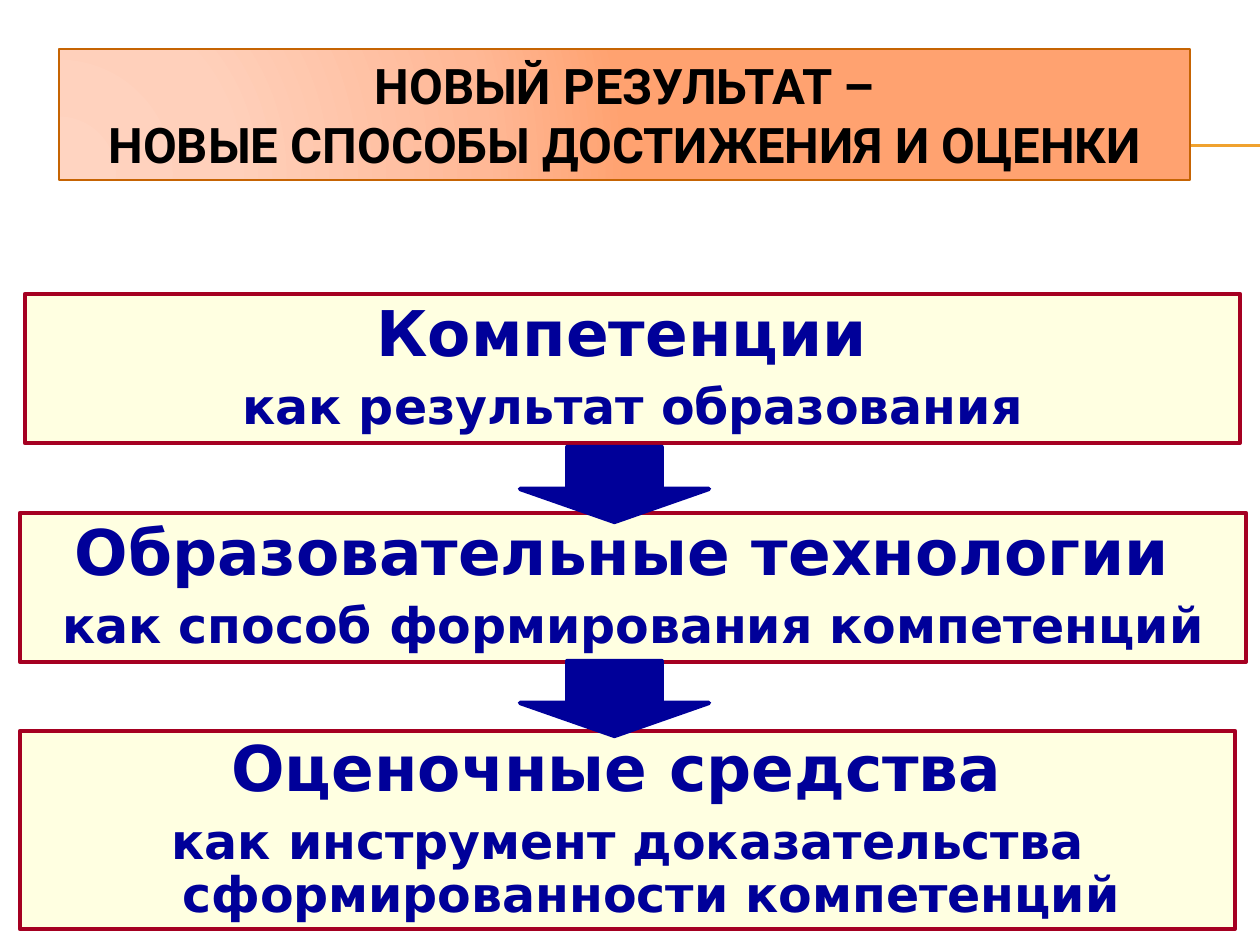
"""Build a slide on competencies, technologies and assessment as a chain of boxes."""
from dataclasses import dataclass

from lxml import etree
from pptx import Presentation
from pptx.dml.color import RGBColor
from pptx.enum.shapes import MSO_CONNECTOR, MSO_SHAPE
from pptx.enum.text import MSO_ANCHOR, MSO_AUTO_SIZE, PP_ALIGN
from pptx.oxml import parse_xml
from pptx.oxml.ns import nsdecls, qn
from pptx.util import Emu, Pt

RECTANGLE = MSO_SHAPE.RECTANGLE
DOWN_ARROW = MSO_SHAPE.DOWN_ARROW
STRAIGHT = MSO_CONNECTOR.STRAIGHT
CENTER = PP_ALIGN.CENTER
TOP, MIDDLE = MSO_ANCHOR.TOP, MSO_ANCHOR.MIDDLE
GROW = MSO_AUTO_SIZE.SHAPE_TO_FIT_TEXT

SLIDE_WIDTH, SLIDE_HEIGHT = 1260, 945
EMU_PER_PX = 914400 / 126
NAVY, CRIMSON, CREAM = "000099", "A50021", "FFFFE1"
HANGING_PX = 47
TITLE = "НОВЫЙ РЕЗУЛЬТАТ –\vНОВЫЕ СПОСОБЫ ДОСТИЖЕНИЯ И ОЦЕНКИ"
TITLE_STOPS = ((0, "FFD4C1"), (30, "FFD0BB"), (75, "FFB896"), (100, "FFA270"))


@dataclass(frozen=True)
class Area:
    left: int
    top: int
    width: int
    height: int


@dataclass(frozen=True)
class Stage:
    area: Area
    heading: str
    role: str


STAGES = (
    Stage(Area(25, 294, 1215, 149), "Компетенции ", "как результат образования"),
    Stage(Area(20, 513, 1226, 149), "Образовательные технологии ",
          "как способ формирования компетенций"),
    Stage(Area(20, 731, 1215, 198), "Оценочные средства ",
          "как инструмент доказательства сформированности компетенций"),
)
ARROWS = (Area(520, 661, 189, 75), Area(520, 447, 189, 75))


def px(length: int) -> Emu:
    return Emu(round(length * EMU_PER_PX))


def color(value: str) -> RGBColor:
    return RGBColor.from_string(value)


def add_block(slide, preset, area: Area, fill: str, outline: str, weight: float):
    block = slide.shapes.add_shape(
        preset, px(area.left), px(area.top), px(area.width), px(area.height))
    block.shadow.inherit = False
    block.fill.solid()
    block.fill.fore_color.rgb = color(fill)
    block.line.color.rgb = color(outline)
    block.line.width = Pt(weight)
    return block


def write(paragraph, text: str, size: int, family: str, ink: str) -> None:
    paragraph.text = text
    paragraph.alignment = CENTER
    font = paragraph.font
    font.size, font.name, font.bold = Pt(size), family, True
    font.color.rgb = color(ink)


def add_rule(slide, top: int) -> None:
    rule = slide.shapes.add_connector(
        STRAIGHT, px(71), px(top), px(SLIDE_WIDTH), px(top))
    rule.line.color.rgb = color("F0A22E")
    rule.line.width = Pt(0.75)
    etree.SubElement(rule._element.spPr, qn("a:effectLst"))


def add_stage(slide, stage: Stage) -> None:
    frame = add_block(slide, RECTANGLE, stage.area, CREAM, CRIMSON, 2.5).text_frame
    frame.word_wrap = True
    frame.vertical_anchor = MIDDLE
    heading, role = frame.paragraphs[0], frame.add_paragraph()
    for paragraph, text, size in ((heading, stage.heading, 36), (role, stage.role, 28)):
        write(paragraph, text, size, "DejaVu Sans", NAVY)
        paragraph.line_spacing = 0.9
        properties = paragraph._p.get_or_add_pPr()
        properties.set("marL", str(px(HANGING_PX)))
        properties.set("indent", str(-px(HANGING_PX)))
    role.space_before = Pt(6.5)


def add_arrow(slide, area: Area) -> None:
    arrow = add_block(slide, DOWN_ARROW, area, NAVY, NAVY, 2.5)
    arrow.adjustments[0] = 0.5
    arrow.adjustments[1] = 0.44


def add_title(slide) -> None:
    banner = add_block(slide, RECTANGLE, Area(59, 49, 1131, 131), "FFA270", "C66403", 1)
    stops = "".join(
        f'<a:gs pos="{position * 1000}"><a:srgbClr val="{tint}"/></a:gs>'
        for position, tint in TITLE_STOPS)
    gradient = parse_xml(
        f'<a:gradFill {nsdecls("a")} rotWithShape="1"><a:gsLst>{stops}</a:gsLst>'
        '<a:path path="circle"><a:fillToRect l="5000" t="100000" r="120000" b="10000"/>'
        '</a:path></a:gradFill>')
    properties = banner._element.spPr
    properties.replace(properties.find(qn("a:solidFill")), gradient)
    frame = banner.text_frame
    frame.word_wrap = True
    frame.auto_size = GROW
    frame.vertical_anchor = TOP
    write(frame.paragraphs[0], TITLE, 28, "Roboto", "000000")


def main() -> None:
    deck = Presentation()
    deck.slide_width, deck.slide_height = px(SLIDE_WIDTH), px(SLIDE_HEIGHT)
    slide = deck.slides.add_slide(deck.slide_layouts[6])
    for top in (145, 146):
        add_rule(slide, top)
    for stage in STAGES:
        add_stage(slide, stage)
    for area in ARROWS:
        add_arrow(slide, area)
    add_title(slide)
    deck.save("out.pptx")


if __name__ == "__main__":
    main()
